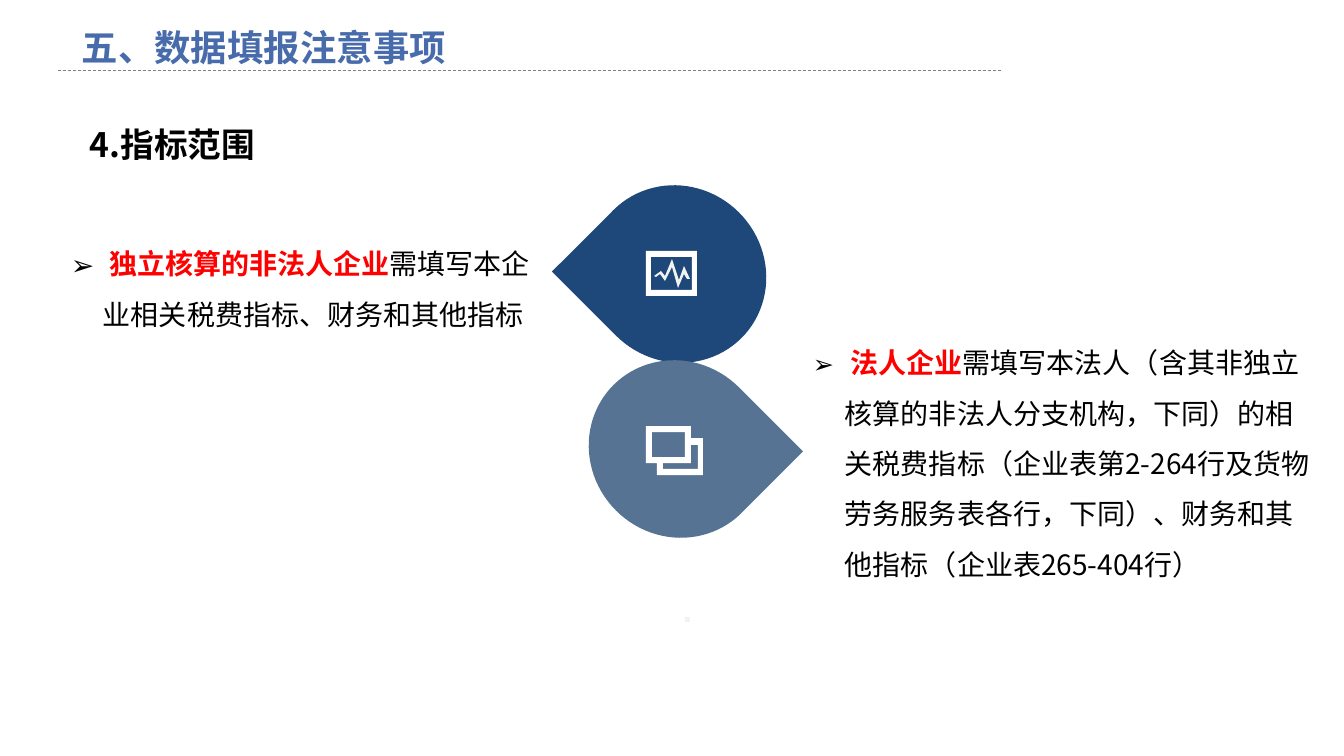
from collections import namedtuple
from dataclasses import dataclass

from lxml import etree
from pptx import Presentation
from pptx.dml.color import RGBColor
from pptx.enum.dml import MSO_LINE
from pptx.enum.shapes import MSO_CONNECTOR, MSO_SHAPE
from pptx.enum.text import MSO_ANCHOR, MSO_AUTO_SIZE, PP_ALIGN
from pptx.oxml.ns import qn
from pptx.util import Emu, Pt

PX = 914400 / 100.8
TITLE_ONLY = 5
STRAIGHT = MSO_CONNECTOR.STRAIGHT
DASH = MSO_LINE.DASH
TEAR = MSO_SHAPE.TEAR
RECTANGLE = MSO_SHAPE.RECTANGLE
MIDDLE, TOP = MSO_ANCHOR.MIDDLE, MSO_ANCHOR.TOP
FIXED, GROW = MSO_AUTO_SIZE.NONE, MSO_AUTO_SIZE.SHAPE_TO_FIT_TEXT
CENTER = PP_ALIGN.CENTER

Box = namedtuple("Box", "left top width height")


@dataclass(frozen=True)
class Theme:
    font: str = "Noto Sans CJK SC"
    title: str = "476BAB"
    ink: str = "000000"
    accent: str = "FF0000"
    rule: str = "808080"
    dark: str = "1E487A"
    muted: str = "577394"
    white: str = "FFFFFF"
    pale: str = "F2F2F2"
    title_size: int = 26
    heading_size: int = 24
    body_size: int = 20
    small_size: int = 18


THEME = Theme()

WAVE = [[(10, 26), (14, 23), (19, 30), (26, 16), (32, 37), (38, 23), (41, 28),
         (44, 28), (38, 15), (33, 29), (26, 8), (19, 25), (15, 20), (8, 25)]]
FRAME = [[(0, 0), (0, 45), (51, 45), (51, 0)],
         [(46, 39), (5, 39), (5, 6), (46, 6)]]
WINDOWS = [[(11, 37), (11, 49), (57, 49), (57, 12), (45, 12), (45, 0), (0, 0), (0, 37)],
           [(52, 19), (52, 43), (17, 43), (17, 37), (45, 37), (45, 19)],
           [(39, 31), (6, 31), (6, 6), (39, 6)]]


def px(length):
    return Emu(round(length * PX))


def apply(target, values):
    for name, value in values.items():
        setattr(target, name, value)


def place(shape, box):
    apply(shape, {name: px(value) for name, value in box._asdict().items()})


def paint(shape, color):
    shape.shadow.inherit = False
    shape.fill.solid()
    shape.fill.fore_color.rgb = RGBColor.from_string(color)
    shape.line.fill.background()


def add_span(para, text, size, color, bold=False):
    span = para.add_run()
    span.text = text
    apply(span.font, {"name": THEME.font, "size": Pt(size), "bold": bold})
    span.font.color.rgb = RGBColor.from_string(color)
    east_asian = etree.SubElement(span._r.get_or_add_rPr(), qn("a:ea"))
    east_asian.set("typeface", THEME.font)


def add_text_box(page, box, auto_size):
    shape = page.shapes.add_textbox(*map(px, box))
    apply(shape.text_frame, {"word_wrap": True, "auto_size": auto_size,
                             "vertical_anchor": TOP})
    return shape.text_frame.paragraphs[0]


def add_bullet(para):
    properties = para._p.get_or_add_pPr()
    properties.set("marL", str(px(32)))
    properties.set("indent", str(-px(32)))
    etree.SubElement(properties, qn("a:buFont")).set("typeface", THEME.font)
    etree.SubElement(properties, qn("a:buChar")).set("char", "➢")


def add_icon(page, box, contours, color):
    builder = page.shapes.build_freeform(*contours[0][0], scale=PX)
    for number, contour in enumerate(contours):
        if number:
            builder.move_to(*contour[0])
        builder.add_line_segments(contour[1:], close=True)
    paint(builder.convert_to_shape(px(box.left), px(box.top)), color)


def add_header(page, box, text):
    title = page.shapes.title
    place(title, Box(box.left + 18, box.top + 13, 492, 74))
    apply(title.text_frame, {"word_wrap": True, "auto_size": FIXED,
                             "vertical_anchor": MIDDLE})
    para = title.text_frame.paragraphs[0]
    apply(para, {"alignment": CENTER, "line_spacing": 0.9})
    add_span(para, text, THEME.title_size, THEME.title, True)
    y = px(box.top + 70)
    rule = page.shapes.add_connector(STRAIGHT, px(box.left + 58), y, px(box.left + 1002), y)
    rule.line.color.rgb = RGBColor.from_string(THEME.rule)
    apply(rule.line, {"width": Pt(0.5), "dash_style": DASH})
    etree.SubElement(rule._element.spPr, qn("a:effectLst"))


def add_heading(page, box, text):
    para = add_text_box(page, box, FIXED)
    add_span(para, text, THEME.heading_size, THEME.ink, True)


def add_note(page, box, subject, detail, bullet_size):
    para = add_text_box(page, box, GROW)
    para.line_spacing = 1.5
    add_bullet(para)
    add_span(para, " ", bullet_size, THEME.ink)
    add_span(para, subject, THEME.body_size, THEME.accent, True)
    add_span(para, detail, THEME.body_size, THEME.ink)


def add_drop(page, box, rotation, color, icons):
    drop = page.shapes.add_shape(TEAR, *map(px, box))
    drop.rotation = rotation
    paint(drop, color)
    icon_box = Box(box.left + 59, box.top + 64, 57, 49)
    for contours, icon_color in icons:
        add_icon(page, icon_box, contours, icon_color)


def add_dot(page, box):
    paint(page.shapes.add_shape(RECTANGLE, *map(px, box)), THEME.pale)


def main():
    deck = Presentation()
    apply(deck, {"slide_width": px(1344), "slide_height": px(756)})
    page = deck.slides.add_slide(deck.slide_layouts[TITLE_ONLY])

    add_header(page, Box(0, 0, 1344, 87), "五、数据填报注意事项")
    add_heading(page, Box(80, 119, 334, 49), "4.指标范围")
    add_note(page, Box(61, 225, 485, 162), "独立核算的非法人企业",
             "需填写本企业相关税费指标、财务和其他指标", THEME.body_size)
    add_note(page, Box(803, 324, 524, 264), "法人企业",
             "需填写本法人（含其非独立核算的非法人分支机构，下同）的相关税费指标"
             "（企业表第2-264行及货物劳务服务表各行，下同）、财务和其他指标"
             "（企业表265-404行）", THEME.small_size)
    add_drop(page, Box(587, 187, 181, 174), 225, THEME.dark,
             [(WAVE, THEME.pale), (FRAME, THEME.white)])
    add_drop(page, Box(587, 362, 181, 174), 45, THEME.muted, [(WINDOWS, THEME.white)])
    add_dot(page, Box(685, 617, 5, 5))
    deck.save("out.pptx")


if __name__ == "__main__":
    main()
